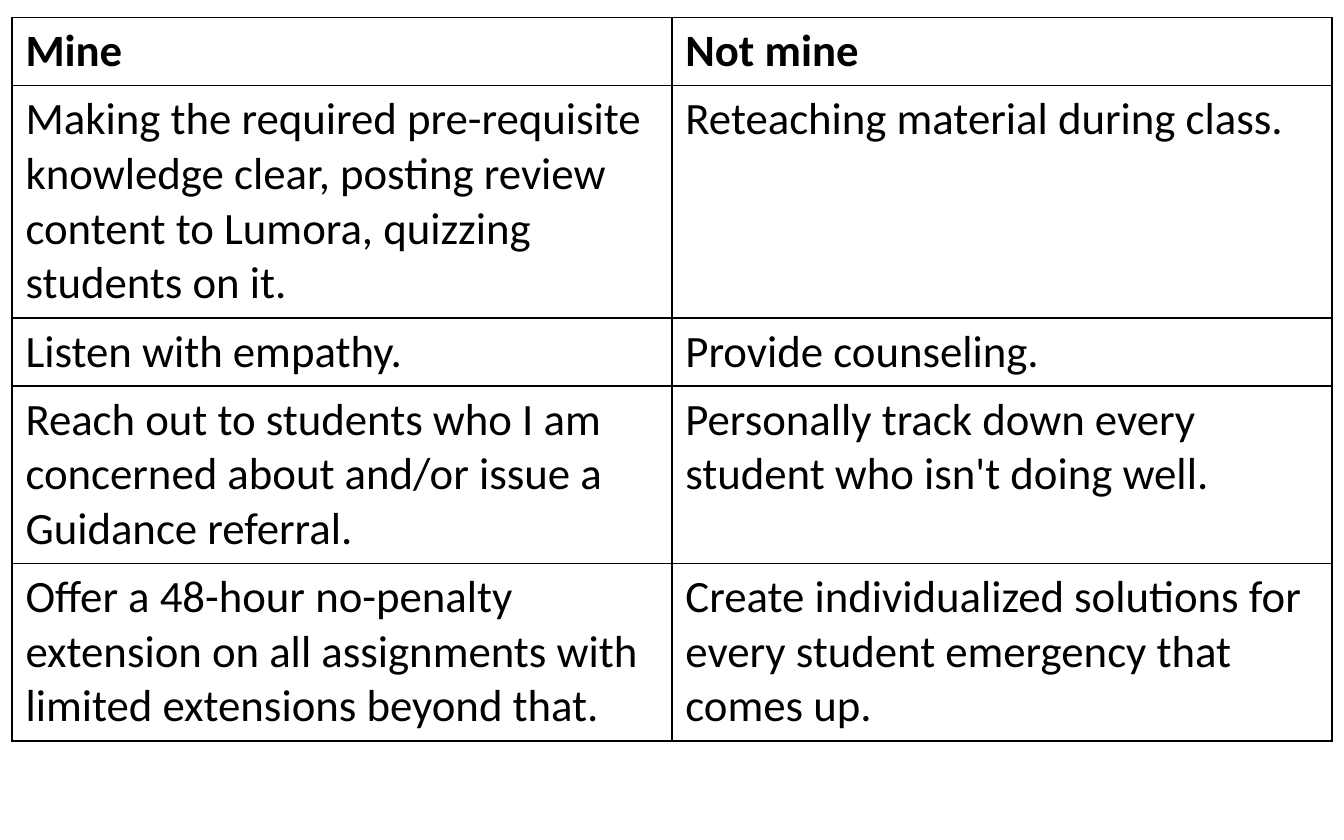
from typing import NamedTuple

from lxml import etree
from pptx import Presentation
from pptx.dml.color import RGBColor
from pptx.oxml import ns
from pptx.table import _Cell
from pptx.util import Inches, Pt

BLACK = "000000"
FONT = "Calibri"
TEXT_SIZE = Pt(24)
BORDER_WIDTH = Pt(1)
LEFT, TOP = Inches(0.09), Inches(0.13)
COLUMN_WIDTH = Inches(4.91)
ROW_HEIGHT = Inches(0.41)  # rows grow to fit their text


class Boundary(NamedTuple):
    mine: str
    not_mine: str


HEADING = Boundary("Mine", "Not mine")
BOUNDARIES = [
    Boundary(
        "Making the required pre-requisite knowledge clear, posting review "
        "content to Lumora, quizzing students on it.",
        "Reteaching material during class.",
    ),
    Boundary("Listen with empathy.", "Provide counseling."),
    Boundary(
        "Reach out to students who I am concerned about and/or issue a "
        "Guidance referral.",
        "Personally track down every student who isn't doing well.",
    ),
    Boundary(
        "Offer a 48-hour no-penalty extension on all assignments with "
        "limited extensions beyond that.",
        "Create individualized solutions for every student emergency that "
        "comes up.",
    ),
]


def color(value: str) -> RGBColor:
    return RGBColor.from_string(value)


def add_borders(cell: _Cell) -> None:
    properties = cell._tc.get_or_add_tcPr()
    for position, side in enumerate(("lnL", "lnR", "lnT", "lnB")):
        # Border lines must come before the cell's fill.
        line = etree.Element(ns.qn(f"a:{side}"), w=str(BORDER_WIDTH))
        fill = etree.SubElement(line, ns.qn("a:solidFill"))
        etree.SubElement(fill, ns.qn("a:srgbClr"), val=BLACK)
        properties.insert(position, line)


def fill_cell(cell: _Cell, wording: str, bold: bool) -> None:
    cell.fill.background()
    add_borders(cell)
    paragraph = cell.text_frame.paragraphs[0]
    paragraph.text = wording
    font = paragraph.runs[0].font
    font.name = FONT
    font.size = TEXT_SIZE
    font.bold = bold
    font.color.rgb = color(BLACK)


def main() -> None:
    presentation = Presentation()
    presentation.slide_width = Inches(10)
    presentation.slide_height = Inches(6.25)
    slide = presentation.slides.add_slide(presentation.slide_layouts[6])

    rows = [HEADING, *BOUNDARIES]
    columns = len(Boundary._fields)
    boundaries_table = slide.shapes.add_table(
        len(rows), columns, LEFT, TOP,
        COLUMN_WIDTH * columns, ROW_HEIGHT * len(rows),
    ).table
    boundaries_table.first_row = False
    boundaries_table.horz_banding = False

    for row_index, boundary in enumerate(rows):
        for column_index, wording in enumerate(boundary):
            cell = boundaries_table.cell(row_index, column_index)
            fill_cell(cell, wording, bold=row_index == 0)

    presentation.save("out.pptx")


if __name__ == "__main__":
    main()
